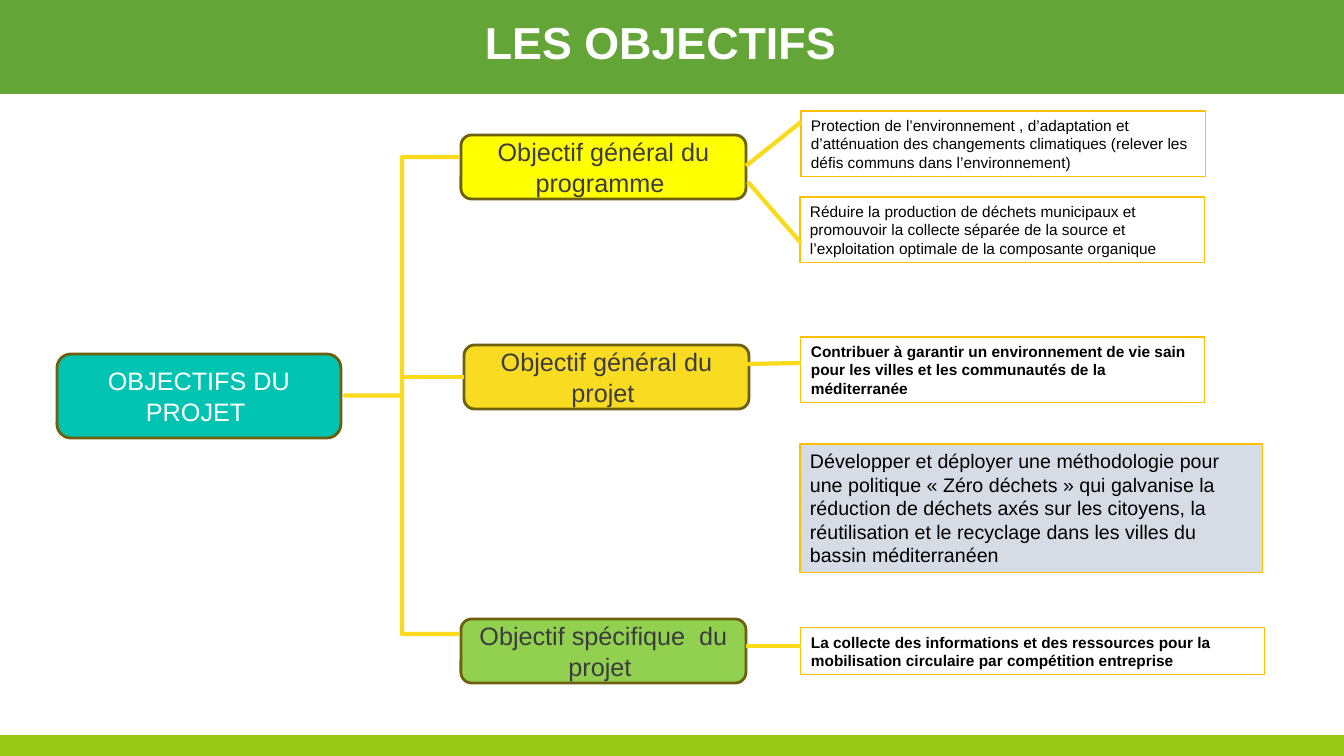
from pptx import Presentation
from pptx.dml.color import RGBColor
from pptx.enum.shapes import MSO_CONNECTOR, MSO_SHAPE
from pptx.enum.text import MSO_ANCHOR, PP_ALIGN
from pptx.oxml.ns import qn
from pptx.util import Emu, Pt
from lxml.etree import SubElement

SCALE = 914400 / 100.8  # EMU per px
YELLOW = "F9DB1B"


def color(code):
    return RGBColor.from_string(code)


def add_box(kind, box, fill=None, line=None, width=1, text="", size=18,
            ink="000000", bold=False, align=PP_ALIGN.LEFT, anchor=MSO_ANCHOR.TOP):
    shape = slide.shapes.add_shape(kind, *[Emu(round(v * SCALE)) for v in box])
    shape.shadow.inherit = False
    if fill:
        shape.fill.solid()
        shape.fill.fore_color.rgb = color(fill)
    else:
        shape.fill.background()
    if line:
        shape.line.color.rgb = color(line)
        shape.line.width = Pt(width)
    else:
        shape.line.fill.background()
    if text:
        frame = shape.text_frame
        frame.word_wrap = True
        frame.vertical_anchor = anchor
        par = frame.paragraphs[0]
        par.text = text
        par.alignment = align
        par.font.name = "Arial"
        par.font.size = Pt(size)
        par.font.bold = bold
        par.font.color.rgb = color(ink)
    return shape


deck = Presentation()
deck.slide_width = Emu(round(1344 * SCALE))
deck.slide_height = Emu(round(756 * SCALE))
slide = deck.slides.add_slide(deck.slide_layouts[6])

# Bands and title
add_box(MSO_SHAPE.RECTANGLE, (0, 0, 1344, 94), "63A537")
add_box(MSO_SHAPE.RECTANGLE, (0, 735, 1344, 21), "99C814")
title = add_box(MSO_SHAPE.RECTANGLE, (81, 16, 1159, 72), text="LES OBJECTIFS",
                size=32, ink="FFFFFF", bold=True, align=PP_ALIGN.CENTER)
title.text_frame.paragraphs[0].line_spacing = 0.9

# Brace from the root to the goals
brace = add_box(MSO_SHAPE.LEFT_BRACE, (345, 157, 114, 477), line=YELLOW, width=3)
brace.adjustments[0] = 0
brace.adjustments[1] = 0.5

# Root and goals
nodes = [
    ((57, 354, 284, 84), "00C3B1", "FFFFFF", "OBJECTIFS DU PROJET "),
    ((461, 135, 285, 64), "FFFF00", "3C3C3C", "Objectif général du programme "),
    ((461, 619, 285, 64), "92D050", "3C3C3C", "Objectif spécifique  du projet "),
    ((464, 345, 285, 64), "F9DC21", "3C3C3C", "Objectif général du projet "),
]
for box, fill, ink, text in nodes:
    goal = add_box(MSO_SHAPE.ROUNDED_RECTANGLE, box, fill, "6D600E", 2, text,
                   ink=ink, align=PP_ALIGN.CENTER, anchor=MSO_ANCHOR.MIDDLE)

# Details
notes = [
    ((801, 111, 405, 66), None, 11, False,
     "Protection de l’environnement , d’adaptation et d’atténuation des "
     "changements climatiques (relever les défis communs dans l’environnement)"),
    ((800, 197, 405, 66), None, 11, False,
     "Réduire la production de déchets municipaux et promouvoir la collecte "
     "séparée de la source et l’exploitation optimale de la composante organique"),
    ((801, 337, 404, 66), None, 11, True,
     "Contribuer à garantir un environnement de vie sain pour les villes et les "
     "communautés de la méditerranée"),
    ((800, 444, 463, 129), "D6DCE5", 14, False,
     "Développer et déployer une méthodologie pour une politique « Zéro déchets » "
     "qui galvanise la réduction de déchets axés sur les citoyens, la réutilisation "
     "et le recyclage dans les villes du bassin méditerranéen"),
    ((801, 628, 464, 47), None, 11, True,
     "La collecte des informations et des ressources pour la mobilisation "
     "circulaire par compétition entreprise"),
]
for box, fill, size, bold, text in notes:
    add_box(MSO_SHAPE.RECTANGLE, box, fill, "FFC000", 0.75, text, size, bold=bold)

# Links; the first one meets the middle of the project goal
links = [
    (402, 377, 464, 377),
    (746, 166, 801, 122),
    (748, 182, 801, 243),
    (746, 364, 801, 363),
    (746, 646, 801, 646),
]
for index, ends in enumerate(links):
    link = slide.shapes.add_connector(
        MSO_CONNECTOR.STRAIGHT, *[Emu(round(v * SCALE)) for v in ends])
    link.line.color.rgb = color(YELLOW)
    link.line.width = Pt(3)
    SubElement(link._element.spPr, qn("a:effectLst"))
    if index == 0:
        link.end_connect(goal, 1)

deck.save("out.pptx")
